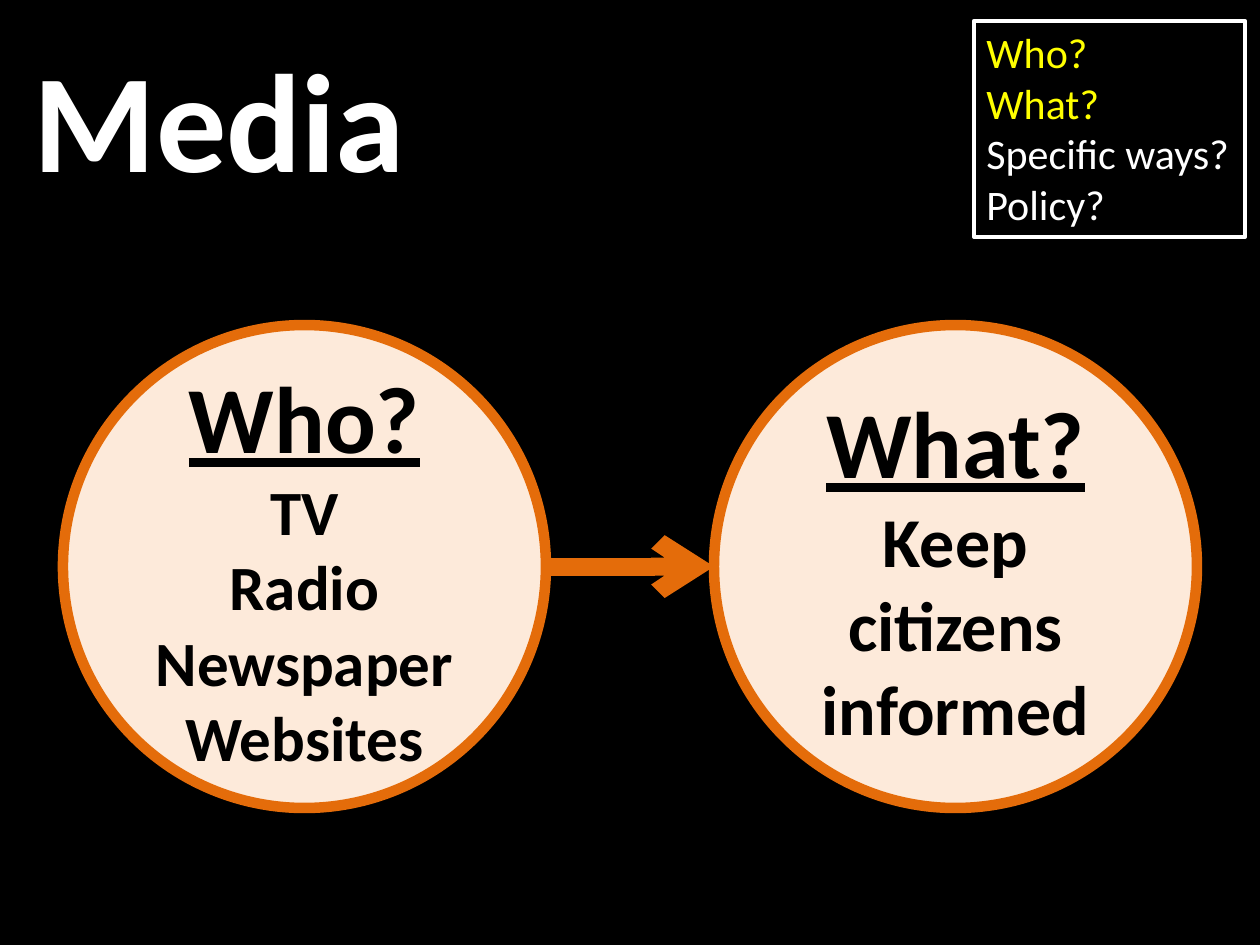
"""Build the Media slide: who acts, what they do, and a checklist of questions."""
from dataclasses import dataclass

from lxml.etree import SubElement
from pptx import Presentation
from pptx.dml.color import RGBColor as RGB
from pptx.enum.shapes import MSO_CONNECTOR as CONN, MSO_SHAPE as SHAPE
from pptx.enum.text import MSO_ANCHOR as ANCHOR, MSO_AUTO_SIZE as FIT, PP_ALIGN as ALIGN
from pptx.oxml.ns import qn
from pptx.util import Inches, Pt


@dataclass
class Theme:
    font: str = "Calibri"
    black: RGB = RGB(0, 0, 0)
    white: RGB = RGB(255, 255, 255)
    yellow: RGB = RGB(255, 255, 0)
    orange: RGB = RGB(0xE4, 0x6C, 0x0A)
    peach: RGB = RGB(0xFD, 0xEA, 0xDA)
    title: int = 80
    heading: int = 54
    question: int = 24


theme = Theme()
prs = Presentation()
prs.slide_width, prs.slide_height = Inches(10), Inches(7.5)
W, H = prs.slide_width, prs.slide_height
s = prs.slides.add_slide(prs.slide_layouts[6])
s.background.fill.solid()
s.background.fill.fore_color.rgb = theme.black


def write(tf, lines, align=ALIGN.LEFT, bold=False):
    for i, (text, size, color) in enumerate(lines):
        p = tf.add_paragraph() if i else tf.paragraphs[0]
        p.text, p.alignment = text, align
        p.font.name, p.font.size, p.font.bold = theme.font, Pt(size), bold
        p.font.color.rgb = color


margin = int(W * 0.05)
d = int(W * 0.3833)
top = int(H * 0.344)
middle = top + d // 2
circles = [
    (margin, "Who?", 36, ["TV", "Radio", "Newspaper", "Websites"]),
    (W - margin - d, "What?", 40, ["Keep citizens", "informed"]),
]
for left, heading, size, items in circles:
    sp = s.shapes.add_shape(SHAPE.OVAL, left, top, d, d)
    sp.shadow.inherit = False
    sp.fill.solid()
    sp.fill.fore_color.rgb = theme.peach
    sp.line.color.rgb, sp.line.width = theme.orange, Pt(6)
    tf = sp.text_frame
    tf.word_wrap, tf.vertical_anchor = True, ANCHOR.MIDDLE
    lines = [(heading, theme.heading, theme.black)]
    lines += [(item, size, theme.black) for item in items]
    write(tf, lines, ALIGN.CENTER, True)
    tf.paragraphs[0].font.underline = True

arrow = s.shapes.add_connector(CONN.STRAIGHT, margin + d, middle, W - margin - d, middle)
arrow.line.color.rgb, arrow.line.width = theme.orange, Pt(10.25)
SubElement(arrow.line._get_or_add_ln(), qn("a:tailEnd"), type="arrow")
SubElement(arrow._element.spPr, qn("a:effectLst"))

title = s.shapes.add_textbox(int(W * 0.017), int(H * 0.04), int(W * 0.9), int(H / 6))
tf = title.text_frame
tf.word_wrap, tf.vertical_anchor = True, ANCHOR.MIDDLE
write(tf, [("Media", theme.title, theme.white)], bold=True)

box = s.shapes.add_textbox(int(W * 0.773), int(H * 0.022), int(W * 0.215), int(H * 0.229))
box.line.color.rgb, box.line.width = theme.white, Pt(2.25)
tf = box.text_frame
tf.word_wrap, tf.auto_size = False, FIT.SHAPE_TO_FIT_TEXT
questions = [
    ("Who?", theme.yellow),
    ("What?", theme.yellow),
    ("Specific ways?", theme.white),
    ("Policy?", theme.white),
]
write(tf, [(text, theme.question, color) for text, color in questions])

prs.save("out.pptx")
